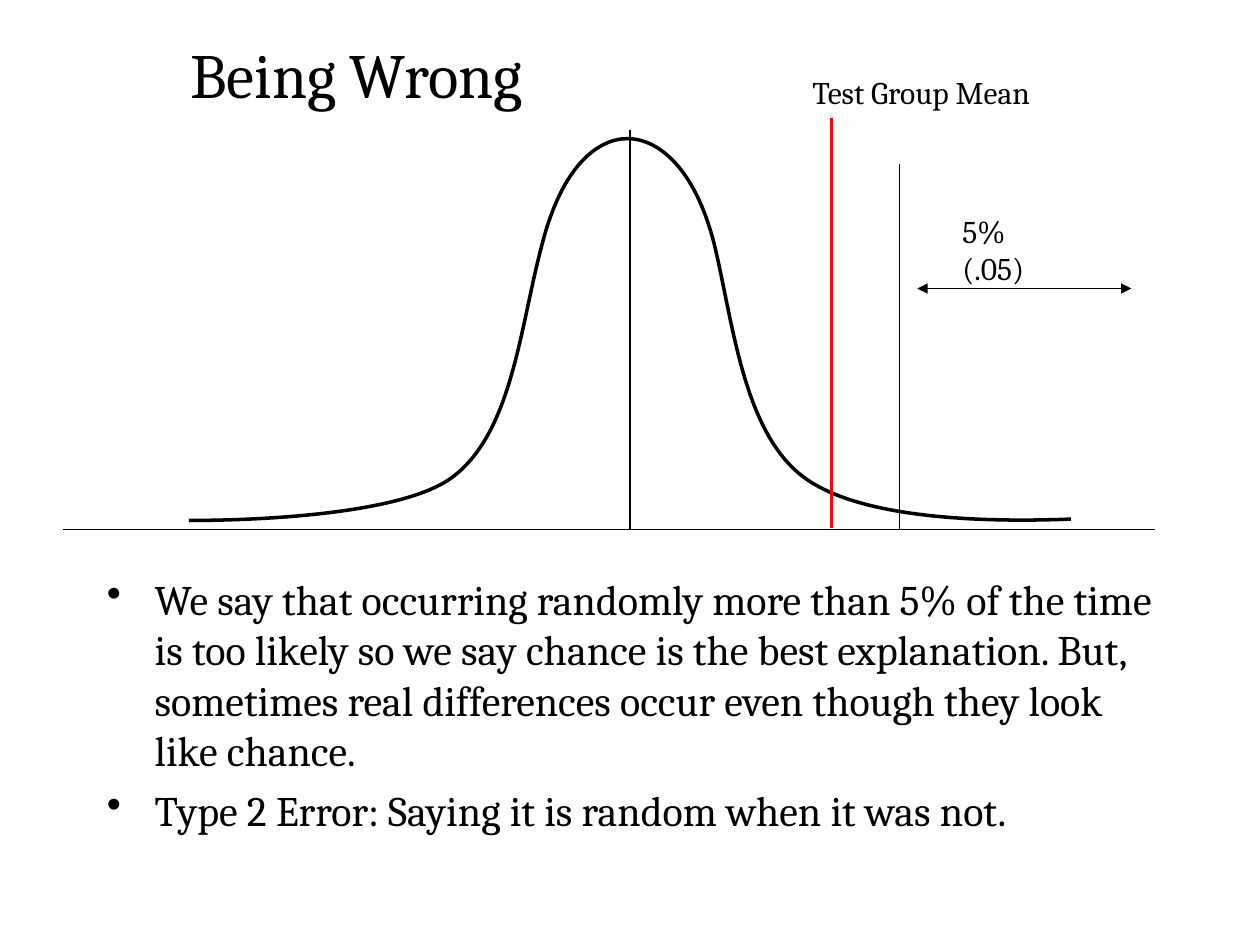
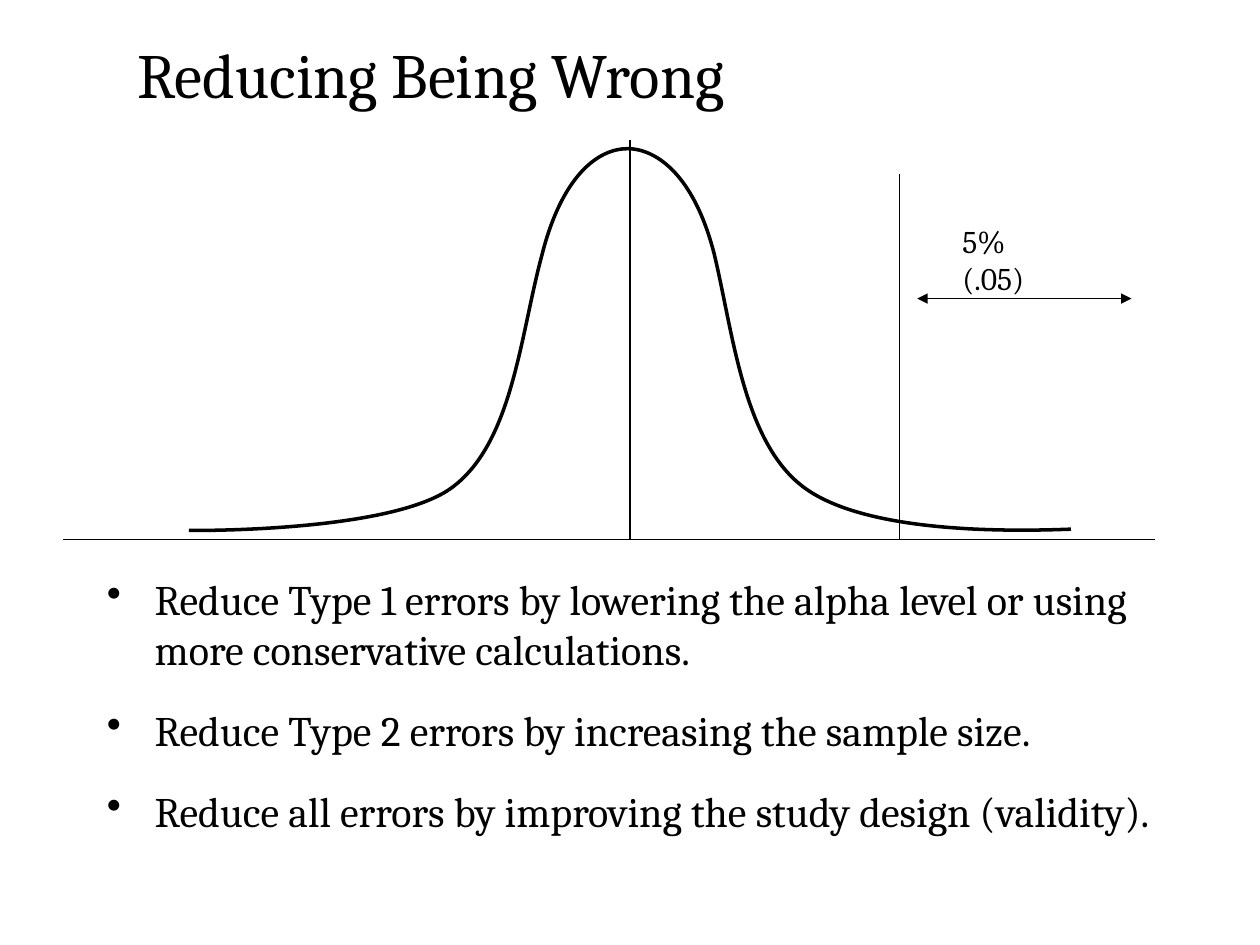
from lxml import etree
from pptx import Presentation
from pptx.dml.color import RGBColor
from pptx.enum import shapes, text
from pptx.oxml import ns
from pptx.util import Inches, Pt

BLACK = RGBColor(0x00, 0x00, 0x00)
RED = RGBColor(0xFF, 0x00, 0x00)
FONT = "Cambria"
THIN, THICK = 0.75, 2
INDENT = 0.38
PARAGRAPH_GAP = 5.5

PAGES = [
    {
        "title": "Being Wrong",
        "title_left": -1.42,
        "drop": 0,
        "space_after": 0,
        "points": [
            "We say that occurring randomly more than 5% of the time is too likely so we say "
            "chance is the best explanation. But, sometimes real differences occur even though "
            "they look like chance.",
            "Type 2 Error: Saying it is random when it was not.",
        ],
        "test_mean": "Test Group Mean",
    },
    {
        "title": "Reducing Being Wrong",
        "title_left": -0.83,
        "drop": 0.08,
        "space_after": 12,
        "points": [
            "Reduce Type 1 errors by lowering the alpha level or using more conservative "
            "calculations.",
            "Reduce Type 2 errors by increasing the sample size.",
            "Reduce all errors by improving the study design (validity).",
        ],
    },
]

CUTOFF_LABEL = "5% (.05)"
AXES = [
    ((5, 1.03), (5, 4.2)),
    ((0.5, 4.2), (9.17, 4.2)),
    ((7.14, 4.2), (7.14, 1.3)),
]
TAIL_SPAN = ((7.28, 2.29), (8.98, 2.29))
TEST_MEAN_LINE = ((6.6, 4.19), (6.6, 0.94))

BELL_START = (8.5, 4.12)
BELL_CURVES = [
    [(7.98, 4.14), (6.85, 4.15), (6.37, 3.78)],
    [(5.9, 3.42), (5.82, 2.57), (5.67, 1.94)],
    [(5.51, 1.31), (5.21, 1.1), (4.98, 1.1)],
    [(4.75, 1.1), (4.46, 1.31), (4.3, 1.95)],
    [(4.13, 2.58), (4.07, 3.42), (3.6, 3.78)],
    [(3.13, 4.15), (1.5, 4.13), (1.5, 4.13)],
]


def add_child(parent, tag, **attributes):
    return etree.SubElement(parent, ns.qn(tag), **attributes)


def add_text(parent, box, lines, size, bulleted=False, align=text.PP_ALIGN.LEFT,
             space_after=0, **frame_format):
    frame = parent.add_textbox(*map(Inches, box)).text_frame
    for name, value in {"word_wrap": True, **frame_format}.items():
        setattr(frame, name, value)
    for index, line in enumerate(lines):
        paragraph = frame.paragraphs[0] if index == 0 else frame.add_paragraph()
        paragraph.text = line
        if bulleted:
            properties = paragraph._p.get_or_add_pPr()
            properties.set("marL", str(Inches(INDENT)))
            properties.set("indent", str(-Inches(INDENT)))
            add_child(properties, "a:buChar", char="•")
        paragraph.alignment = align
        paragraph.space_before = Pt(PARAGRAPH_GAP if index else 0)
        paragraph.space_after = Pt(space_after)
        for name, value in {"name": FONT, "size": Pt(size)}.items():
            setattr(paragraph.font, name, value)
        paragraph.font.color.rgb = BLACK


def style_line(line, color, width):
    line.color.rgb = color
    line.width = Pt(width)


def add_line(parent, ends, drop=0, color=BLACK, width=THIN, arrows=False):
    (x1, y1), (x2, y2) = ends
    line = parent.add_connector(
        shapes.MSO_CONNECTOR.STRAIGHT,
        *map(Inches, (x1, y1 + drop, x2, y2 + drop)))
    style_line(line.line, color, width)
    if arrows:
        outline = line.line._get_or_add_ln()
        for end in ("a:headEnd", "a:tailEnd"):
            add_child(outline, end, type="triangle")
    add_child(line._element.spPr, "a:effectLst")


def add_bell(parent, drop):
    def place(point):
        return Inches(point[0]), Inches(point[1] + drop)

    builder = parent.build_freeform(*place(BELL_START))
    builder.add_line_segments(
        [place(point) for curve in BELL_CURVES for point in curve], close=False)
    bell = builder.convert_to_shape()
    bell.shadow.inherit = False
    bell.fill.background()
    style_line(bell.line, BLACK, THICK)
    outline = bell._element.find(".//" + ns.qn("a:path"))
    segments = outline.findall(ns.qn("a:lnTo"))
    for start in range(0, len(segments), 3):
        curve = add_child(outline, "a:cubicBezTo")
        for segment in segments[start:start + 3]:
            curve.append(segment[0])
            outline.remove(segment)


def add_distribution(slide, drop):
    diagram = slide.shapes.add_group_shape().shapes
    for ends in AXES:
        add_line(diagram, ends, drop)
    add_line(diagram, TAIL_SPAN, drop, arrows=True)
    add_text(diagram, (7.54, 1.63 + drop, 1.08, 0.4), [CUTOFF_LABEL], 18,
             margin_right=Inches(0.3))
    add_bell(diagram, drop)


def build_page(deck, page):
    slide = deck.slides.add_slide(deck.slide_layouts[6])
    add_text(slide.shapes, (page["title_left"], 0.08, 8.5, 1), [page["title"]], 36,
             align=text.PP_ALIGN.CENTER, vertical_anchor=text.MSO_ANCHOR.MIDDLE)
    add_text(slide.shapes, (0.75, 4.5, 8.5, 2.25), page["points"], 24,
             bulleted=True, space_after=page["space_after"])
    add_distribution(slide, page["drop"])
    if "test_mean" in page:
        add_line(slide.shapes, TEST_MEAN_LINE, color=RED, width=THICK)
        add_text(slide.shapes, (6.35, 0.53, 1.97, 0.4), [page["test_mean"]], 18,
                 word_wrap=False)


def main():
    deck = Presentation()
    deck.slide_width, deck.slide_height = Inches(10), Inches(7.5)
    for page in PAGES:
        build_page(deck, page)
    deck.save("out.pptx")


if __name__ == "__main__":
    main()
